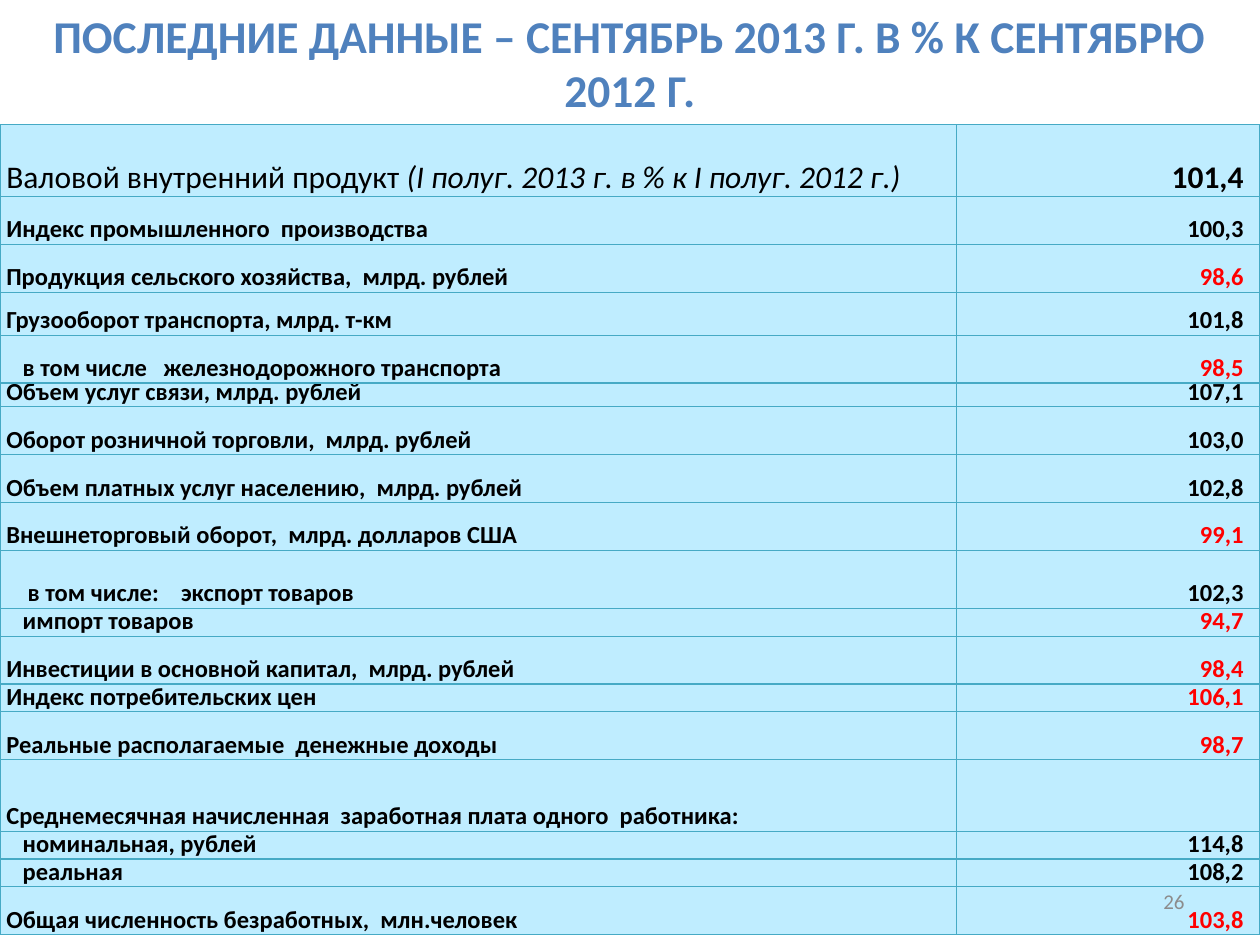
from dataclasses import dataclass

from lxml import etree
from pptx import Presentation
from pptx import util as u
from pptx.dml.color import RGBColor
from pptx.enum import text
from pptx.oxml import ns


@dataclass(frozen=True)
class Theme:
    font: str = "Calibri"
    heading: str = "4F81BD"
    ink: str = "000000"
    decline: str = "FF0000"
    muted: str = "8C8C8C"
    cell: str = "BFEDFF"
    border: str = "46AAC5"
    border_width: float = 0.75
    title_size: int = 26
    lead_size: int = 18
    body_size: int = 14
    number_size: int = 12


THEME = Theme()
WIDTH, HEIGHT = 10, 7.5
COLUMN_SHARES = (0.759, 0.241)
INSET, VALUE_INSET = 0.05, 0.13
SUB, SUB_WIDE = 0.13, 0.17  # extra indents of subordinate rows

LEAD_LABEL = "Валовой внутренний продукт"
LEAD_NOTE = "\u00a0(I полуг. 2013 г. в % к I полуг. 2012 г.)".replace("\u00a0", " ")
LEAD_VALUE, LEAD_HEIGHT = "101,4", 0.57

# label, value, value is highlighted, row height, indent
INDICATORS = [
    ("Индекс промышленного  производства", "100,3", False, 0.38, 0),
    ("Продукция сельского хозяйства,  млрд. рублей", "98,6", True, 0.38, 0),
    ("Грузооборот транспорта, млрд. т-км", "101,8", False, 0.34, 0),
    ("в том числе   железнодорожного транспорта", "98,5", True, 0.38, SUB),
    ("Объем услуг связи, млрд. рублей", "107,1", False, 0.19, 0),
    ("Оборот розничной торговли,  млрд. рублей", "103,0", False, 0.38, 0),
    ("Объем платных услуг населению,  млрд. рублей", "102,8", False, 0.38, 0),
    ("Внешнеторговый оборот,  млрд. долларов США", "99,1", True, 0.38, 0),
    ("в том числе:    экспорт товаров", "102,3", False, 0.46, SUB_WIDE),
    ("импорт товаров", "94,7", True, 0.22, SUB),
    ("Инвестиции в основной капитал,  млрд. рублей", "98,4", True, 0.38, 0),
    ("Индекс потребительских цен", "106,1", True, 0.22, 0),
    ("Реальные располагаемые  денежные доходы", "98,7", True, 0.38, 0),
    ("Среднемесячная начисленная  заработная плата одного  работника:",
     "", False, 0.57, 0),
    ("номинальная, рублей", "114,8", False, 0.22, SUB),
    ("реальная", "108,2", False, 0.22, SUB),
    ("Общая численность безработных,  млн.человек", "103,8", True, 0.38, 0),
]


def write(para, words, size=THEME.body_size, color=THEME.ink, bold=False,
          italic=False, align=text.PP_ALIGN.LEFT, line=None):
    """Append one formatted span; line is an exact line spacing in points."""
    para.alignment = align
    if line:
        para.line_spacing = u.Pt(line)
    span = para.add_run()
    span.text = words
    span.font.name = THEME.font
    span.font.size = u.Pt(size)
    span.font.bold = bold
    span.font.italic = italic
    span.font.color.rgb = RGBColor.from_string(color)


def add_text_box(page, box, words, **form):
    frame = page.shapes.add_textbox(*(u.Inches(n) for n in box)).text_frame
    frame.word_wrap = True
    frame.vertical_anchor = text.MSO_ANCHOR.MIDDLE
    write(frame.paragraphs[0], words, **form)


def add_title(page, box):
    add_text_box(page, box,
                 "ПОСЛЕДНИЕ ДАННЫЕ – СЕНТЯБРЬ 2013 Г. В % К СЕНТЯБРЮ 2012 Г.",
                 size=THEME.title_size, color=THEME.heading, bold=True,
                 align=text.PP_ALIGN.CENTER)


def add_page_number(page, box):
    add_text_box(page, box, "26", size=THEME.number_size, color=THEME.muted,
                 align=text.PP_ALIGN.RIGHT)


def add_borders(cell):
    properties = cell._tc.get_or_add_tcPr()
    for place, side in enumerate(("lnL", "lnR", "lnT", "lnB")):
        edge = etree.Element(ns.qn(f"a:{side}"), w=str(u.Pt(THEME.border_width)))
        fill = etree.SubElement(edge, ns.qn("a:solidFill"))
        etree.SubElement(fill, ns.qn("a:srgbClr"), val=THEME.border)
        properties.insert(place, edge)


def style_cell(cell, left=INSET, right=INSET):
    cell.margin_left, cell.margin_right = u.Inches(left), u.Inches(right)
    cell.margin_top = cell.margin_bottom = 0
    cell.vertical_anchor = text.MSO_ANCHOR.BOTTOM
    cell.fill.solid()
    cell.fill.fore_color.rgb = RGBColor.from_string(THEME.cell)
    add_borders(cell)


def fill_row(table, index, height, spans, value, indent=0, **value_form):
    """Write a label made of (words, format) spans and its value."""
    table.rows[index].height = u.Inches(height)
    label_cell, value_cell = table.cell(index, 0), table.cell(index, 1)
    style_cell(label_cell, left=INSET + indent)
    style_cell(value_cell, right=VALUE_INSET)
    para = label_cell.text_frame.paragraphs[0]
    para.space_before = u.Pt(3 if indent else 5)
    for words, form in spans:
        write(para, words, line=6.8, **form)
    if value:
        write(value_cell.text_frame.paragraphs[0], value, bold=True, line=8,
              align=text.PP_ALIGN.RIGHT, **value_form)


def add_indicator_table(page, box):
    frame = page.shapes.add_table(len(INDICATORS) + 1, len(COLUMN_SHARES),
                                  *(u.Inches(n) for n in box))
    table = frame.table
    table.first_row = table.horz_banding = False
    for column, share in zip(table.columns, COLUMN_SHARES):
        column.width = u.Inches(box[2] * share)
    lead = {"size": THEME.lead_size}
    fill_row(table, 0, LEAD_HEIGHT,
             [(LEAD_LABEL, lead), (LEAD_NOTE, {**lead, "italic": True})],
             LEAD_VALUE, **lead)
    for index, (label, value, marked, height, indent) in enumerate(INDICATORS, 1):
        fill_row(table, index, height, [(label, {"bold": True})], value, indent,
                 color=THEME.decline if marked else THEME.ink)


def main():
    deck = Presentation()
    deck.slide_width, deck.slide_height = u.Inches(WIDTH), u.Inches(HEIGHT)
    page = deck.slides.add_slide(deck.slide_layouts[6])
    title_height = HEIGHT * 0.132
    add_title(page, (0, 0, WIDTH, title_height))
    add_indicator_table(page, (0, title_height, WIDTH, HEIGHT * 0.86))
    add_page_number(page, (WIDTH * 0.717, HEIGHT * 0.927,
                           WIDTH * 0.233, HEIGHT * 0.053))
    deck.save("out.pptx")


if __name__ == "__main__":
    main()
